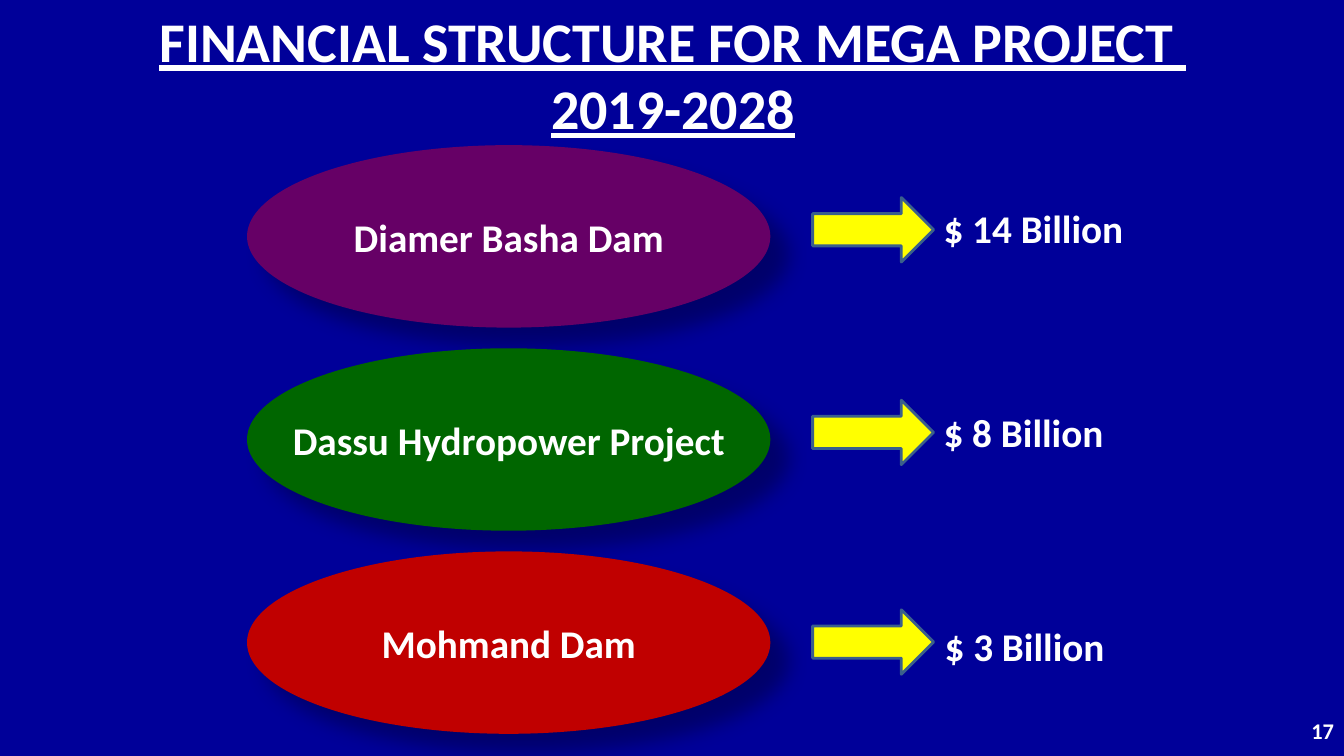
import pptx
import pptx.util
import pptx.dml.color
import pptx.enum.shapes
import pptx.enum.text
import pptx.oxml
import pptx.oxml.ns

Inches = pptx.util.Inches
ALIGN = pptx.enum.text.PP_ALIGN
ANCHOR = pptx.enum.text.MSO_ANCHOR
SHAPE = pptx.enum.shapes.MSO_SHAPE

COLORS = {
    "background": "000099",
    "text": "FFFFFF",
    "purple": "660066",
    "green": "006600",
    "red": "C00000",
    "arrow": "FFFF00",
    "arrow_line": "3A5F8C",
}

PROJECTS = [
    ("Diamer Basha Dam", "purple", "$ 14 Billion", 1.96, 9.26, 1.98),
    ("Dassu Hydropower Project", "green", "$ 8 Billion", 3.97, 9.26, 4.0),
    ("Mohmand Dam", "red", "$ 3 Billion", 6.05, 9.27, 6.12),
]
OVAL_TOP = 1.44
OVAL_STEP = 2.015

SHADOW = (
    '<a:effectLst xmlns:a="http://schemas.openxmlformats.org/drawingml/2006/main">'
    '<a:outerShdw blurRad="190500" dist="228600" dir="2700000" algn="tl" rotWithShape="0">'
    '<a:srgbClr val="000000"><a:alpha val="30000"/></a:srgbClr>'
    '</a:outerShdw></a:effectLst>'
)


def color(name):
    return pptx.dml.color.RGBColor.from_string(COLORS[name])


def write(box, text, size, align, anchor, underline=False, wrap=True):
    frame = box.text_frame
    frame.text = text
    frame.word_wrap = wrap
    frame.auto_size = pptx.enum.text.MSO_AUTO_SIZE.NONE
    frame.vertical_anchor = anchor
    para = frame.paragraphs[0]
    para.alignment = align
    for span in para.runs:
        span.font.name = "Calibri"
        span.font.size = pptx.util.Pt(size)
        span.font.bold = True
        span.font.underline = underline
        span.font.color.rgb = color("text")


def add_title(page, text):
    title = page.shapes.title
    title.left, title.top = Inches(0.38), Inches(0.02)
    title.width, title.height = Inches(12.59), Inches(1.42)
    write(title, text, 40, ALIGN.CENTER, ANCHOR.MIDDLE, underline=True)


def add_label(page, text, left, top, width, height, size, align, anchor):
    box = page.shapes.add_textbox(Inches(left), Inches(top), Inches(width), Inches(height))
    write(box, text, size, align, anchor)


def add_project_oval(page, name, fill, top):
    oval = page.shapes.add_shape(
        SHAPE.OVAL, Inches(2.45), Inches(top), Inches(5.19), Inches(1.81))
    oval.fill.solid()
    oval.fill.fore_color.rgb = color(fill)
    oval.line.fill.background()
    properties = oval.element.find(pptx.oxml.ns.qn("p:spPr"))
    properties.append(pptx.oxml.parse_xml(SHADOW))
    write(oval, name, 28, ALIGN.CENTER, ANCHOR.MIDDLE, wrap=False)


def add_arrow(page, top):
    arrow = page.shapes.add_shape(
        SHAPE.RIGHT_ARROW, Inches(8.06), Inches(top), Inches(1.2), Inches(0.64))
    arrow.shadow.inherit = False
    arrow.fill.solid()
    arrow.fill.fore_color.rgb = color("arrow")
    arrow.line.color.rgb = color("arrow_line")
    arrow.line.width = pptx.util.Pt(2)


def main():
    deck = pptx.Presentation()
    deck.slide_width, deck.slide_height = Inches(13.33), Inches(7.5)
    page = deck.slides.add_slide(deck.slide_layouts[5])
    page.background.fill.solid()
    page.background.fill.fore_color.rgb = color("background")

    add_title(page, "FINANCIAL STRUCTURE FOR MEGA PROJECT \v2019-2028")
    add_label(page, "17", 10.33, 7.05, 3, 0.4, 16, ALIGN.RIGHT, ANCHOR.MIDDLE)
    for index, (name, fill, cost, arrow_top, cost_left, cost_top) in enumerate(PROJECTS):
        add_project_oval(page, name, fill, OVAL_TOP + index * OVAL_STEP)
        add_arrow(page, arrow_top)
        add_label(page, cost, cost_left, cost_top, 2.12, 0.57, 28, ALIGN.LEFT, ANCHOR.TOP)
    deck.save("out.pptx")


if __name__ == "__main__":
    main()
